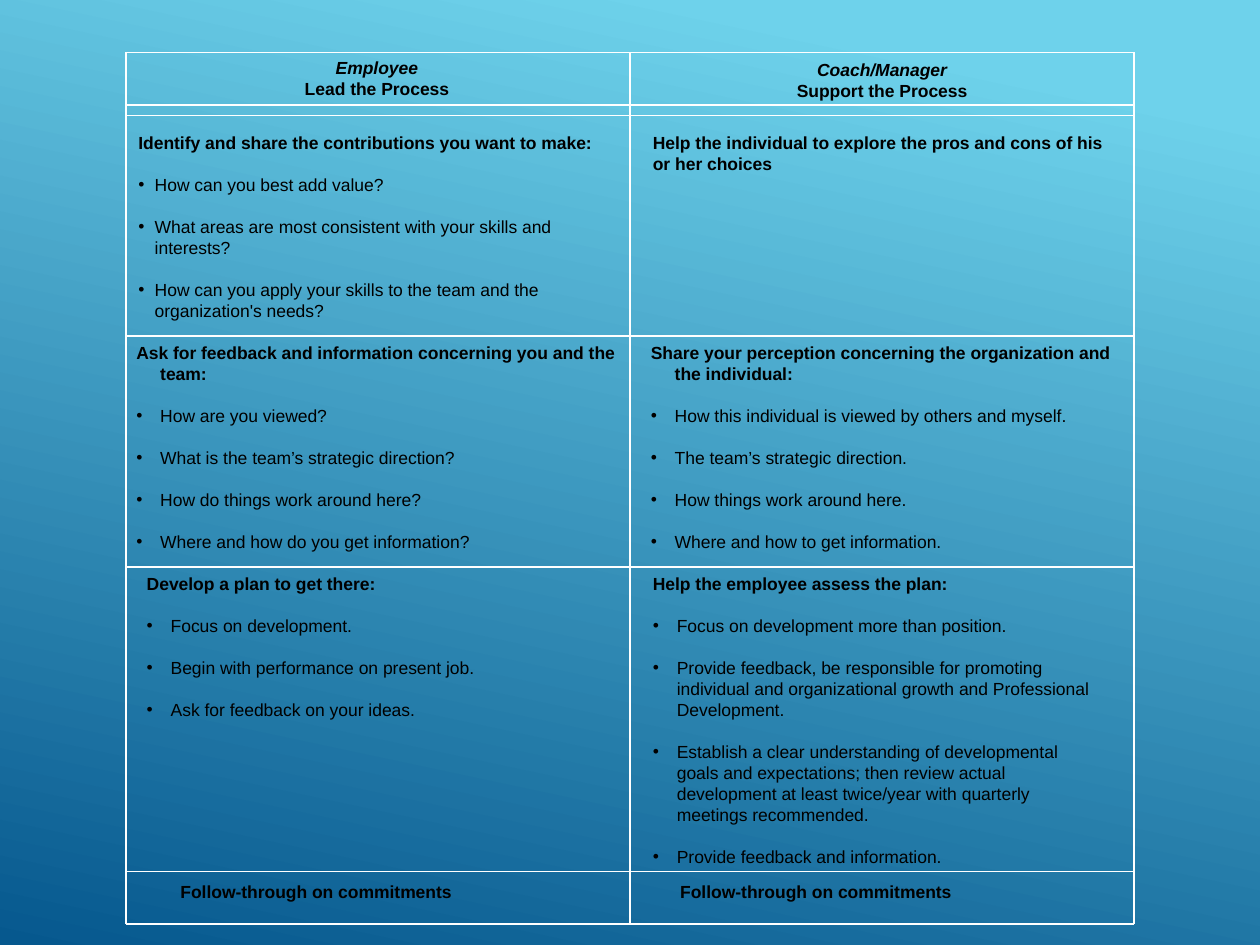
from dataclasses import dataclass

from lxml import etree
from pptx import Presentation
from pptx.dml.color import RGBColor
from pptx.enum.shapes import MSO_CONNECTOR
from pptx.enum.text import MSO_ANCHOR, MSO_AUTO_SIZE, PP_ALIGN
from pptx.oxml.ns import qn
from pptx.util import Inches, Pt

STRAIGHT = MSO_CONNECTOR.STRAIGHT
TOP, BOTTOM = MSO_ANCHOR.TOP, MSO_ANCHOR.BOTTOM
LEFT, CENTER = PP_ALIGN.LEFT, PP_ALIGN.CENTER
GROW, FIXED = MSO_AUTO_SIZE.SHAPE_TO_FIT_TEXT, MSO_AUTO_SIZE.NONE
UNIT = Inches(1) / 12
GRID_COLUMNS, GRID_ROWS = 120, 90
TABLE_COLUMNS = (12, 60, 108)
TABLE_ROWS = (5, 10, 11, 32, 54, 83, 88)


@dataclass(frozen=True)
class Theme:
    sky: RGBColor = RGBColor.from_string("6ED2EB")
    deep: RGBColor = RGBColor.from_string("06588E")
    rule: RGBColor = RGBColor.from_string("FFFFFF")
    text: RGBColor = RGBColor.from_string("000000")
    font: str = "Arial"
    size: float = 10
    gap: float = 12
    rule_width: float = 0.75
    angle: float = 258


@dataclass(frozen=True)
class Area:
    column: float
    row: float
    width: float
    height: float


@dataclass(frozen=True)
class Header:
    area: Area
    role: str
    duty: str


@dataclass(frozen=True)
class Topic:
    area: Area
    heading: str
    points: tuple[str, ...] = ()
    indent: float = 0.19


THEME = Theme()
FOLLOW_UP = "Follow-through on commitments"
FOLLOW_UP_AREAS = (Area(16, 82, 32.8, 4.5), Area(63.6, 82, 32.8, 4.5))
HEADERS = (
    Header(Area(26.8, 4.8, 18.2, 5.2), "Employee", "Lead the Process"),
    Header(Area(74, 5, 20, 5.2), "Coach/Manager", "Support the Process"),
)
TOPICS = (
    Topic(Area(12, 12, 49, 19.2),
          "Identify and share the contributions you want to make:",
          ("How can you best add value?",
           "What areas are most consistent with your skills and interests?",
           "How can you apply your skills to the team and the organization's needs?"),
          0.13),
    Topic(Area(61, 12, 47, 5.2),
          "Help the individual to explore the pros and cons of his or her choices",
          indent=0),
    Topic(Area(11.8, 32, 49.2, 21.2),
          "Ask for feedback and information concerning you and the team:",
          ("How are you viewed?",
           "What is the team’s strategic direction?",
           "How do things work around here?",
           "Where and how do you get information?")),
    Topic(Area(60.8, 32, 46.2, 21.2),
          "Share your perception concerning the organization and the individual:",
          ("How this individual is viewed by others and myself.",
           "The team’s strategic direction.",
           "How things work around here.",
           "Where and how to get information.")),
    Topic(Area(12.8, 54, 44.2, 15.2),
          "Develop a plan to get there:",
          ("Focus on development.",
           "Begin with performance on present job.",
           "Ask for feedback on your ideas.")),
    Topic(Area(61, 54, 44.2, 29.5),
          "Help the employee assess the plan:",
          ("Focus on development more than position.",
           "Provide feedback, be responsible for promoting individual and "
           "organizational growth and Professional Development.",
           "Establish a clear understanding of developmental goals and expectations; "
           "then review actual development at least twice/year with quarterly "
           "meetings recommended.",
           "Provide feedback and information.")),
)


def grid(units: float) -> int:
    return round(units * UNIT)


def apply(target, values: dict) -> None:
    for name, value in values.items():
        setattr(target, name, value)


def paint_background(page) -> None:
    fill = page.background.fill
    fill.gradient()
    fill.gradient_angle = THEME.angle
    for stop, color, position in zip(
            fill.gradient_stops, (THEME.sky, THEME.deep), (0.1, 1)):
        stop.color.rgb = color
        stop.position = position


def draw_rule(page, start: tuple[int, int], end: tuple[int, int]) -> None:
    rule = page.shapes.add_connector(STRAIGHT, *map(grid, start + end))
    rule.line.color.rgb = THEME.rule
    rule.line.width = Pt(THEME.rule_width)
    etree.SubElement(rule._element.spPr, qn("a:effectLst"))


def add_frame(page, area: Area, anchor=TOP, auto_size=GROW):
    box = page.shapes.add_textbox(
        *map(grid, (area.column, area.row, area.width, area.height)))
    apply(box.text_frame, {
        "word_wrap": True, "auto_size": auto_size, "vertical_anchor": anchor})
    return box.text_frame


def write(para, text: str, bold: bool = True, italic: bool = False,
          alignment=LEFT) -> None:
    para.alignment = alignment
    span = para.add_run()
    span.text = text
    apply(span.font, {"name": THEME.font, "size": Pt(THEME.size),
                      "bold": bold, "italic": italic})
    span.font.color.rgb = THEME.text


def hang(para, indent: float, bullet: str = "") -> None:
    properties = para._p.get_or_add_pPr()
    properties.set("marL", str(Inches(indent)))
    properties.set("indent", str(-Inches(indent)))
    if bullet:
        font = etree.SubElement(properties, qn("a:buFont"))
        font.set("typeface", THEME.font)
        etree.SubElement(properties, qn("a:buChar")).set("char", bullet)


def draw_header(page, header: Header) -> None:
    frame = add_frame(page, header.area)
    write(frame.paragraphs[0], header.role, italic=True, alignment=CENTER)
    write(frame.add_paragraph(), header.duty, alignment=CENTER)


def draw_topic(page, topic: Topic) -> None:
    frame = add_frame(page, topic.area)
    write(frame.paragraphs[0], topic.heading)
    hang(frame.paragraphs[0], topic.indent)
    for point in topic.points:
        para = frame.add_paragraph()
        para.space_before = Pt(THEME.gap)
        write(para, point, bold=False)
        hang(para, topic.indent, "•")


def main() -> None:
    deck = Presentation()
    apply(deck, {"slide_width": grid(GRID_COLUMNS), "slide_height": grid(GRID_ROWS)})
    page = deck.slides.add_slide(deck.slide_layouts[6])
    paint_background(page)
    for column in TABLE_COLUMNS:
        draw_rule(page, (column, TABLE_ROWS[0]), (column, TABLE_ROWS[-1]))
    for row in TABLE_ROWS:
        draw_rule(page, (TABLE_COLUMNS[0], row), (TABLE_COLUMNS[-1], row))
    for header in HEADERS:
        draw_header(page, header)
    for topic in TOPICS:
        draw_topic(page, topic)
    for area in FOLLOW_UP_AREAS:
        write(add_frame(page, area, BOTTOM, FIXED).paragraphs[0], FOLLOW_UP)
    deck.save("out.pptx")


if __name__ == "__main__":
    main()
